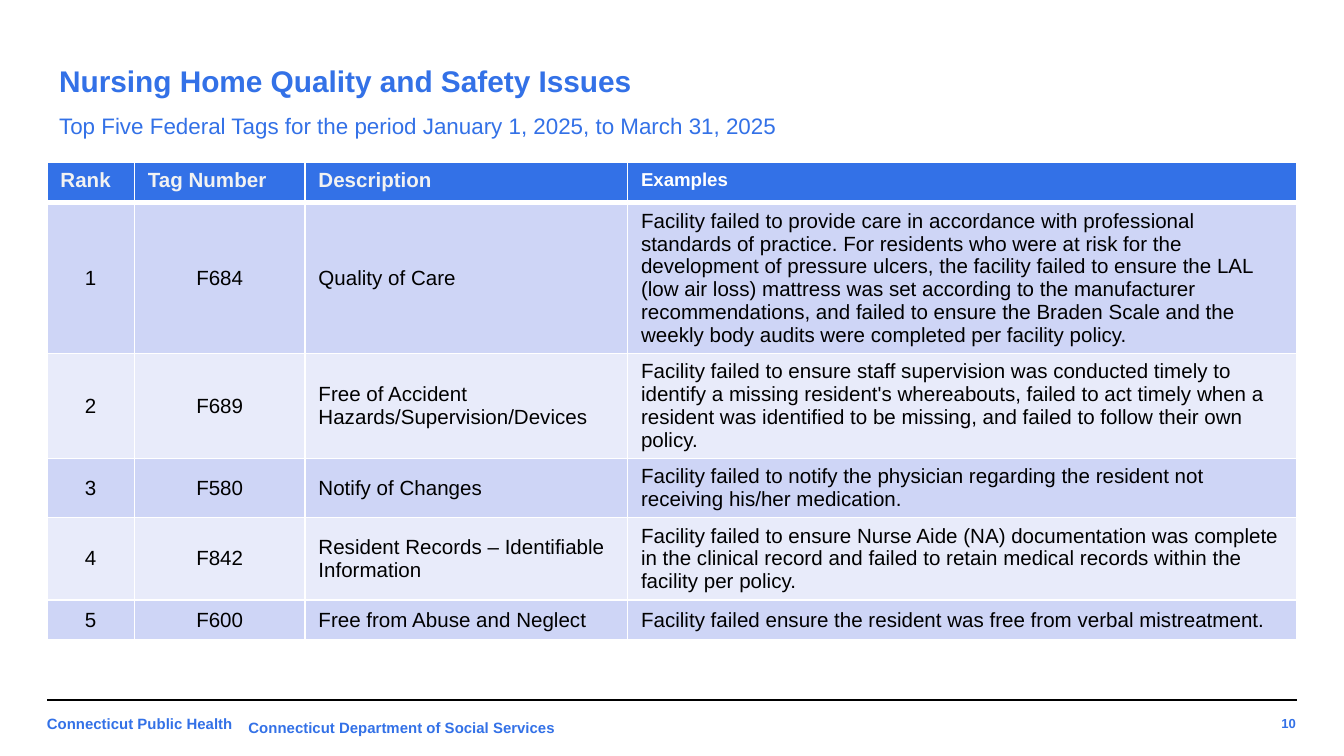
"""Build the nursing home federal tags slide."""
from dataclasses import dataclass

from lxml.etree import SubElement
from pptx import Presentation
from pptx.dml.color import RGBColor
from pptx.enum.shapes import MSO_CONNECTOR as Connector
from pptx.enum.text import MSO_ANCHOR as Anchor, MSO_AUTO_SIZE as AutoSize, PP_ALIGN as Align
from pptx.oxml.ns import qn
from pptx.util import Inches, Pt


@dataclass(frozen=True)
class Theme:
    """Colours, font and type sizes of the slide."""
    font: str = "Arial"
    blue: str = "3371E7"
    white: str = "FFFFFF"
    black: str = "000000"
    header_text: str = "F2F2F2"
    bands: tuple[str, str] = ("CED5F6", "E8EBFA")
    title: float = 16
    subtitle: float = 12
    body: float = 11
    examples: float = 10
    footer: float = 8
    number: float = 7


@dataclass(frozen=True)
class Label:
    """A small bold text of the footer."""
    text: str
    box: tuple[float, float, float, float]
    size: float
    margins: tuple[float, float] = (0.1, 0.1)
    align: Align = Align.LEFT
    anchor: Anchor = Anchor.TOP
    wrap: bool = True
    auto_size: AutoSize = AutoSize.NONE


@dataclass(frozen=True)
class Tag:
    """One ranked federal tag."""
    number: str
    description: str
    example: str


THEME = Theme()
SLIDE_WIDTH = 10
SLIDE_HEIGHT = SLIDE_WIDTH * 9 / 16
COLUMNS = {"Rank": 0.65, "Tag Number": 1.27, "Description": 2.4, "Examples": 4.98}
ROW_HEIGHT = 0.3
TAGS = (
    Tag("F684", "Quality of Care",
        "Facility failed to provide care in accordance with professional standards of practice. "
        "For residents who were at risk for the development of pressure ulcers, the facility "
        "failed to ensure the LAL (low air loss) mattress was set according to the manufacturer "
        "recommendations, and failed to ensure the Braden Scale and the weekly body audits were "
        "completed per facility policy."),
    Tag("F689", "Free of Accident Hazards/Supervision/Devices",
        "Facility failed to ensure staff supervision was conducted timely to identify a missing "
        "resident's whereabouts, failed to act timely when a resident was identified to be "
        "missing, and failed to follow their own policy."),
    Tag("F580", "Notify of Changes",
        "Facility failed to notify the physician regarding the resident not receiving his/her "
        "medication."),
    Tag("F842", "Resident Records – Identifiable Information",
        "Facility failed to ensure Nurse Aide (NA) documentation was complete in the clinical "
        "record and failed to retain medical records within the facility per policy."),
    Tag("F600", "Free from Abuse and Neglect",
        "Facility failed ensure the resident was free from verbal mistreatment."),
)
LABELS = (
    Label("10", (9.14, 5.26, 0.6, 0.25), THEME.number, align=Align.RIGHT, anchor=Anchor.MIDDLE),
    Label("Connecticut Public Health", (0.25, 5.25, 3.28, 0.34), THEME.footer,
          auto_size=AutoSize.SHAPE_TO_FIT_TEXT),
    Label("Connecticut Department of Social Services", (1.75, 5.3, 2.51, 0.24), THEME.footer,
          margins=(0.1, 0.05), wrap=False, auto_size=AutoSize.SHAPE_TO_FIT_TEXT),
)


def apply(target, formats: dict) -> None:
    """Set every attribute named in formats."""
    for name, value in formats.items():
        setattr(target, name, value)


def add_span(para, text: str, size: float, color: str, bold: bool = False) -> None:
    """Append one formatted run to a paragraph."""
    span = para.add_run()
    span.text = text
    apply(span.font, {"name": THEME.font, "size": Pt(size), "bold": bold})
    span.font.color.rgb = RGBColor.from_string(color)


def frame_format(side: float, end: float) -> dict:
    """Return text frame margins for the sides and the ends."""
    return {"margin_left": Inches(side), "margin_right": Inches(side),
            "margin_top": Inches(end), "margin_bottom": Inches(end)}


def add_title(page) -> None:
    """Fill the title placeholder with the title and its subtitle."""
    title = page.shapes.title
    apply(title, {"left": Inches(0.34), "top": Inches(0.25),
                  "width": Inches(9.32), "height": Inches(0.87)})
    apply(title.text_frame, frame_format(0.1, 0.1) | {
        "vertical_anchor": Anchor.MIDDLE, "word_wrap": True, "auto_size": AutoSize.NONE})
    para = title.text_frame.paragraphs[0]
    apply(para, {"alignment": Align.LEFT, "line_spacing": 1.5,
                 "space_before": Pt(0), "space_after": Pt(6)})
    add_span(para, "Nursing Home Quality and Safety Issues", THEME.title, THEME.blue, True)
    para.add_line_break()
    add_span(para, "Top Five Federal Tags for the period January 1, 2025, to March 31, 2025",
             THEME.subtitle, THEME.blue)


def add_label(page, label: Label) -> None:
    """Draw one footer label."""
    box = page.shapes.add_textbox(*map(Inches, label.box))
    apply(box.text_frame, frame_format(*label.margins) | {
        "vertical_anchor": label.anchor, "word_wrap": label.wrap,
        "auto_size": label.auto_size})
    para = box.text_frame.paragraphs[0]
    para.alignment = label.align
    add_span(para, label.text, label.size, THEME.blue, True)


def add_rule(page) -> None:
    """Draw the line above the footer."""
    rule = page.shapes.add_connector(Connector.STRAIGHT, *map(Inches, (9.65, 5.21, 0.35, 5.21)))
    rule.line.width = Pt(0.75)
    rule.line.color.rgb = RGBColor.from_string(THEME.black)
    SubElement(rule._element.spPr, qn("a:effectLst"))


def style_cell(cell, fill: str, top: float = 1, bottom: float = 1) -> None:
    """Give a cell white borders and a plain fill."""
    properties = cell._tc.get_or_add_tcPr()
    for side, width in {"L": 1, "R": 1, "T": top, "B": bottom}.items():
        border = SubElement(properties, qn(f"a:ln{side}"), w=str(Pt(width)))
        paint = SubElement(border, qn("a:solidFill"))
        SubElement(paint, qn("a:srgbClr"), val=THEME.white)
    cell.fill.solid()
    cell.fill.fore_color.rgb = RGBColor.from_string(fill)


def add_tag_table(page) -> None:
    """Draw the table of ranked tags."""
    frame = page.shapes.add_table(len(TAGS) + 1, len(COLUMNS), Inches(0.35), Inches(1.21),
                                  Inches(9.3), Inches(3.75))
    table = frame.table
    for column, (heading, width) in enumerate(COLUMNS.items()):
        table.columns[column].width = Inches(width)
        cell = table.cell(0, column)
        style_cell(cell, THEME.blue, bottom=3)
        is_examples = heading == "Examples"
        add_span(cell.text_frame.paragraphs[0], heading,
                 THEME.examples if is_examples else THEME.body,
                 THEME.white if is_examples else THEME.header_text, True)
    for rank, tag in enumerate(TAGS, 1):
        for column, text in enumerate((str(rank), tag.number, tag.description, tag.example)):
            cell = table.cell(rank, column)
            style_cell(cell, THEME.bands[(rank - 1) % 2], top=3 if rank == 1 else 1)
            cell.vertical_anchor = Anchor.MIDDLE
            para = cell.text_frame.paragraphs[0]
            para.alignment = Align.CENTER if column < 2 else Align.LEFT
            add_span(para, text, THEME.body, THEME.black)
    for row in table.rows:
        row.height = Inches(ROW_HEIGHT)
    frame.height = Inches(3.75)


def main() -> None:
    """Build and save the deck."""
    deck = Presentation()
    apply(deck, {"slide_width": Inches(SLIDE_WIDTH), "slide_height": Inches(SLIDE_HEIGHT)})
    page = deck.slides.add_slide(deck.slide_layouts[5])
    add_title(page)
    add_rule(page)
    add_tag_table(page)
    for label in LABELS:
        add_label(page, label)
    deck.save("out.pptx")


if __name__ == "__main__":
    main()
